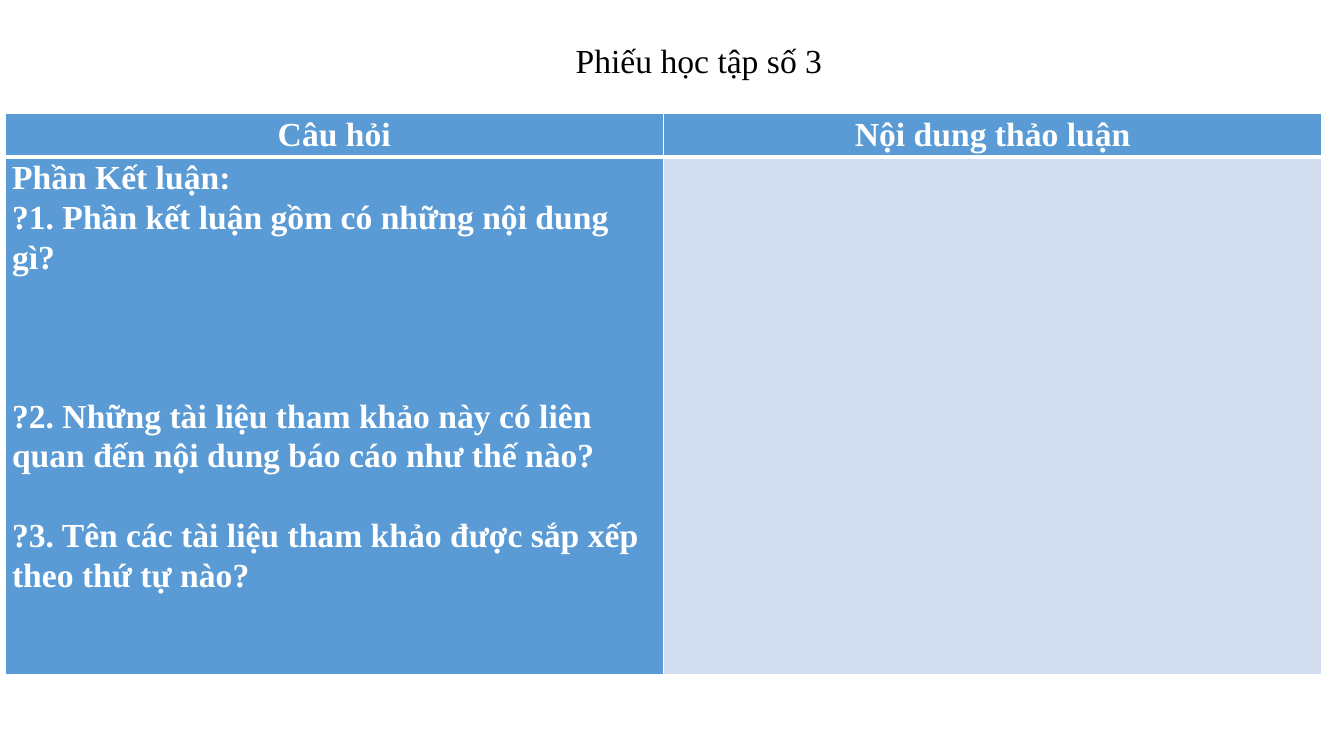
from lxml import etree
from pptx import Presentation
from pptx import util as u
from pptx.dml.color import RGBColor
from pptx.enum import text
from pptx.oxml import ns

WORKSHEET = "Phiếu học tập số 3"
HEADINGS = ["Câu hỏi", "Nội dung thảo luận"]
# Each line of the question column, with the answer lines left free above it
QUESTIONS = [
    ("Phần Kết luận:", 0),
    ("?1. Phần kết luận gồm có những nội dung gì?", 0),
    ("?2. Những tài liệu tham khảo này có liên quan đến nội dung báo cáo như thế nào?", 3),
    ("?3. Tên các tài liệu tham khảo được sắp xếp theo thứ tự nào?", 1),
]

FONT = "Times New Roman"
SIZE = u.Pt(24)
LINE_PITCH = 28.4
BLACK = RGBColor(0, 0, 0)
WHITE = RGBColor(255, 255, 255)
BLUE = RGBColor(0x5B, 0x9B, 0xD5)
PALE_BLUE = RGBColor(0xD2, 0xDE, 0xEF)

COLUMN_WIDTH = u.Inches(6.53)
HEADING_HEIGHT, QUESTION_HEIGHT = u.Inches(0.43), u.Inches(5.13)
THIN, THICK = u.Pt(1), u.Pt(3)


def write(paragraph, wording, color, bold=False):
    run = paragraph.add_run()
    run.text = wording
    run.font.name, run.font.size = FONT, SIZE
    run.font.bold = bold
    run.font.color.rgb = color


def style_cell(cell, fill, top, bottom):
    """Give a cell white borders, a solid fill and tight margins."""
    properties = cell._tc.get_or_add_tcPr()
    for side, width in (("L", THIN), ("R", THIN), ("T", top), ("B", bottom)):
        border = etree.SubElement(properties, ns.qn(f"a:ln{side}"), w=str(width))
        paint = etree.SubElement(border, ns.qn("a:solidFill"))
        etree.SubElement(paint, ns.qn("a:srgbClr"), val=str(WHITE))
    cell.fill.solid()
    cell.fill.fore_color.rgb = fill
    cell.margin_left = cell.margin_right = u.Inches(0.07)
    cell.margin_top = cell.margin_bottom = 0


def add_title(slide):
    title = slide.shapes.title
    title.left, title.top = u.Inches(5.61), u.Inches(0.35)
    title.width, title.height = u.Inches(2.75), u.Inches(0.5)
    frame = title.text_frame
    frame.word_wrap = False
    frame.auto_size = text.MSO_AUTO_SIZE.NONE
    frame.vertical_anchor = text.MSO_ANCHOR.TOP
    heading = frame.paragraphs[0]
    heading.alignment = text.PP_ALIGN.LEFT
    write(heading, WORKSHEET, BLACK)


def add_question_table(slide):
    table = slide.shapes.add_table(
        2, len(HEADINGS), u.Inches(0.05), u.Inches(1.13),
        COLUMN_WIDTH * len(HEADINGS), HEADING_HEIGHT + QUESTION_HEIGHT).table
    table.rows[0].height, table.rows[1].height = HEADING_HEIGHT, QUESTION_HEIGHT

    for column, heading in enumerate(HEADINGS):
        cell = table.cell(0, column)
        style_cell(cell, BLUE, THIN, THICK)
        paragraph = cell.text_frame.paragraphs[0]
        paragraph.alignment = text.PP_ALIGN.CENTER
        paragraph.line_spacing = 1.07
        write(paragraph, heading, WHITE, bold=True)

    questions, answers = table.rows[1].cells
    style_cell(questions, BLUE, THICK, THIN)
    style_cell(answers, PALE_BLUE, THICK, THIN)
    frame = questions.text_frame
    for index, (question, free_lines) in enumerate(QUESTIONS):
        paragraph = frame.add_paragraph() if index else frame.paragraphs[0]
        paragraph.line_spacing = 1.07
        if free_lines:
            paragraph.space_before = u.Pt(free_lines * LINE_PITCH)
        write(paragraph, question, WHITE, bold=True)


def main():
    deck = Presentation()
    deck.slide_width, deck.slide_height = u.Inches(13.33), u.Inches(7.5)
    slide = deck.slides.add_slide(deck.slide_layouts.get_by_name("Title Only"))
    add_title(slide)
    add_question_table(slide)
    deck.save("out.pptx")


if __name__ == "__main__":
    main()
